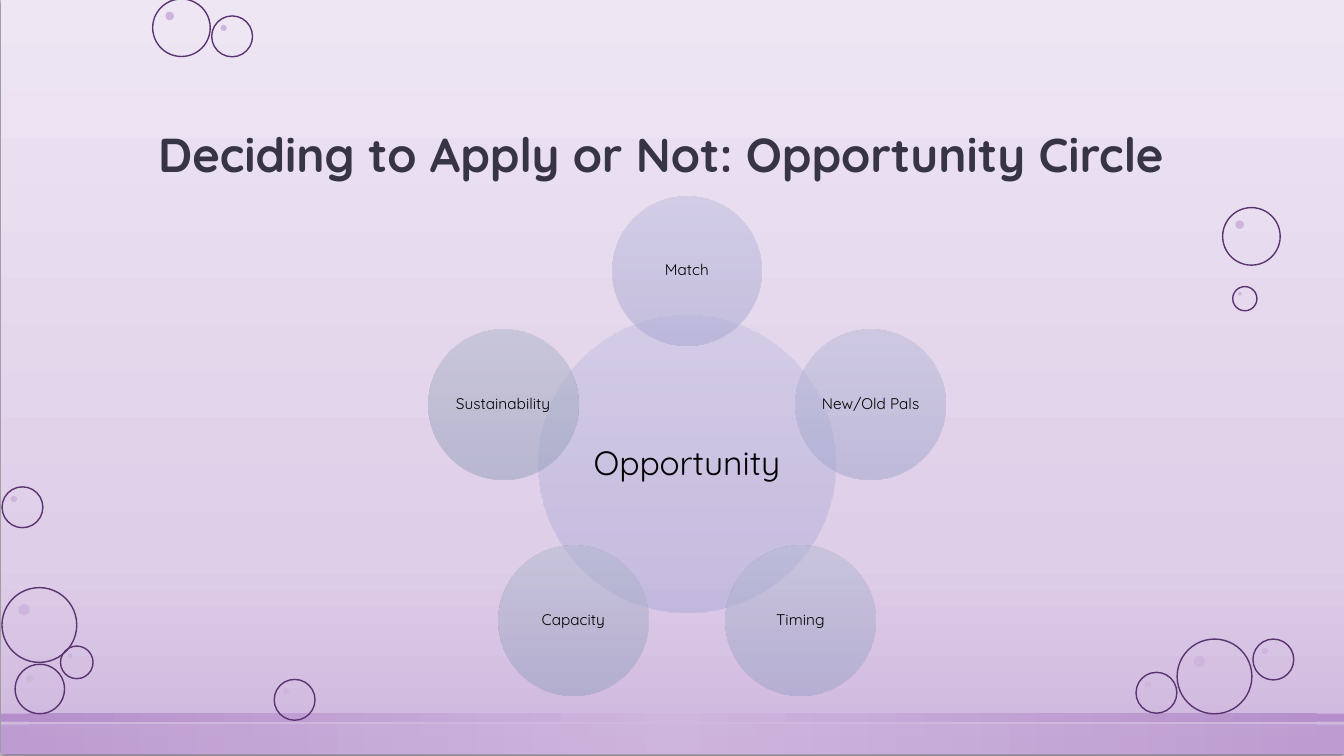
"""Build the Opportunity Circle slide on a grid of 160 columns by 90 rows."""
from dataclasses import dataclass
from math import cos, radians, sin
from typing import Optional

from lxml.etree import SubElement
from pptx import Presentation
from pptx.dml.color import RGBColor
from pptx.enum.shapes import MSO_SHAPE
from pptx.enum.text import MSO_ANCHOR, PP_ALIGN
from pptx.oxml.ns import qn
from pptx.util import Inches, Pt

COLS, ROWS = 160, 90
WIDTH, HEIGHT = Inches(13.333), Inches(7.5)


@dataclass(frozen=True)
class Theme:
    font: str = "Quicksand"
    title: str = "373545"
    label: str = "000000"
    outline: str = "5A3471"
    glint: str = "CEB5DD"
    sky: tuple = ((0, "EFE6F4"), (74, "DECEE8"), (100, "CEB5DD"))
    band: tuple = ((0, "CEB5DD"), (100, "AD84C6"))
    title_size: int = 34
    hub_size: int = 24
    petal_size: int = 11


@dataclass(frozen=True)
class Box:
    col: float
    row: float
    width: float
    height: float

    def emu(self) -> tuple:
        cw, rh = WIDTH / COLS, HEIGHT / ROWS
        return (round(self.col * cw), round(self.row * rh),
                round(self.width * cw), round(self.height * rh))


@dataclass(frozen=True)
class Bubble:
    col: float
    row: float
    size: float


@dataclass(frozen=True)
class Circle:
    text: str
    colors: tuple


THEME = Theme()
LARGE, MEDIUM, SMALL = 8.9, 6.85, 4.86
BUBBLES = (
    Bubble(0.24, 69.96, LARGE), Bubble(7.2, 76.92, 3.88),
    Bubble(1.8, 79.08, 5.88), Bubble(32.64, 80.88, SMALL),
    Bubble(0.24, 57.96, SMALL), Bubble(140.14, 76.08, LARGE),
    Bubble(135.24, 80.04, SMALL), Bubble(149.16, 76.08, SMALL),
    Bubble(145.56, 24.72, MEDIUM), Bubble(146.76, 34.12, 2.88),
    Bubble(18.18, -0.12, MEDIUM), Bubble(25.2, 1.9, SMALL),
)
BANDS = ((Box(0.12, 86.28, COLS, 3.6), 50), (Box(0.12, 84.96, COLS, 0.96), 80))
HUB = Circle("Opportunity", ("C4C3E3", "B8B6DC", "ACAAD9"))
PETALS = (
    Circle("Match", ("BEBFDE", "B1B2D7", "A4A6D3")),
    Circle("New/Old Pals", ("B9BCD9", "ADB0D2", "9FA4CD")),
    Circle("Timing", ("B5BAD4", "A8AFCC", "9AA2C7")),
    Circle("Capacity", ("B1B9CF", "A5ADC6", "95A0C0")),
    Circle("Sustainability", ("AEB7CA", "A2ABC1", "929EBA")),
)
CENTER_COL, CENTER_ROW = 81.78, 55.26
HUB_DIAMETER, PETAL_DIAMETER, ORBIT = 35.4, 17.8, 23


def add_plain(s, kind, box: Box, fill: Optional[str] = None,
              line: Optional[str] = None):
    sp = s.shapes.add_shape(kind, *box.emu())
    sp.shadow.inherit = False
    if fill:
        sp.fill.solid()
        sp.fill.fore_color.rgb = RGBColor.from_string(fill)
    else:
        sp.fill.background()
    if line:
        sp.line.color.rgb = RGBColor.from_string(line)
        sp.line.width = Pt(1)
    else:
        sp.line.fill.background()
    return sp


def set_gradient(sp, stops: tuple, alpha: int = 100, radial: bool = False) -> None:
    grad = sp._element.spPr.find(qn("a:noFill"))
    grad.tag = qn("a:gradFill")
    grad.set("rotWithShape", "1")
    stop_list = SubElement(grad, qn("a:gsLst"))
    for pos, color in stops:
        gs = SubElement(stop_list, qn("a:gs"), pos=str(pos * 1000))
        clr = SubElement(gs, qn("a:srgbClr"), val=color)
        if alpha < 100:
            SubElement(clr, qn("a:alpha"), val=str(alpha * 1000))
    if radial:
        shade = SubElement(grad, qn("a:path"), path="circle")
        SubElement(shade, qn("a:fillToRect"), dict.fromkeys("ltrb", "50000"))
    else:
        SubElement(grad, qn("a:lin"), ang="5400000", scaled="0")


def add_shadow(sp) -> None:
    effects = sp._element.spPr.find(qn("a:effectLst"))
    shadow = SubElement(effects, qn("a:outerShdw"), blurRad=str(Pt(4.5)),
                        dist=str(Pt(1.5)), dir="5400000", rotWithShape="0")
    clr = SubElement(shadow, qn("a:srgbClr"), val="000000")
    SubElement(clr, qn("a:alpha"), val="63000")


def set_text(sp, text: str, size: int, color: str, bold: bool = False) -> None:
    tf = sp.text_frame
    tf.text = text
    tf.word_wrap = True
    p = tf.paragraphs[0]
    p.line_spacing = 0.9
    font = p.runs[0].font
    font.name, font.size, font.bold = THEME.font, Pt(size), bold
    font.color.rgb = RGBColor.from_string(color)


def add_backdrop(s) -> None:
    sp = add_plain(s, MSO_SHAPE.RECTANGLE, Box(0.12, -0.24, COLS, ROWS))
    set_gradient(sp, THEME.sky)
    add_shadow(sp)
    for box, alpha in BANDS:
        set_gradient(add_plain(s, MSO_SHAPE.RECTANGLE, box), THEME.band, alpha, True)


def add_bubble(s, bubble: Bubble) -> None:
    size, inset, glint = bubble.size, 0.22 * bubble.size, 0.15 * bubble.size
    add_plain(s, MSO_SHAPE.OVAL, Box(bubble.col, bubble.row, size, size),
              line=THEME.outline)
    add_plain(s, MSO_SHAPE.OVAL,
              Box(bubble.col + inset, bubble.row + inset, glint, glint),
              fill=THEME.glint)


def add_title(s, text: str) -> None:
    sp = s.shapes.add_textbox(*Box(17.64, 6.12, 124.8, 16.2).emu())
    set_text(sp, text, THEME.title_size, THEME.title, bold=True)
    sp.text_frame.vertical_anchor = MSO_ANCHOR.BOTTOM


def add_circle(s, circle: Circle, col: float, row: float, diameter: float,
               size: int, inset: float) -> None:
    box = Box(col - diameter / 2, row - diameter / 2, diameter, diameter)
    sp = add_plain(s, MSO_SHAPE.OVAL, box)
    set_gradient(sp, tuple(zip((0, 50, 100), circle.colors)), 50)
    set_text(sp, circle.text, size, THEME.label)
    tf = sp.text_frame
    tf.margin_left = tf.margin_right = tf.margin_top = tf.margin_bottom = Inches(inset)
    tf.vertical_anchor = MSO_ANCHOR.MIDDLE
    tf.paragraphs[0].alignment = PP_ALIGN.CENTER


def main() -> None:
    prs = Presentation()
    prs.slide_width, prs.slide_height = WIDTH, HEIGHT
    s = prs.slides.add_slide(prs.slide_layouts[6])
    add_backdrop(s)
    for bubble in BUBBLES:
        add_bubble(s, bubble)
    add_title(s, "Deciding to Apply or Not: Opportunity Circle")
    add_circle(s, HUB, CENTER_COL, CENTER_ROW, HUB_DIAMETER, THEME.hub_size, 0.03)
    for i, petal in enumerate(PETALS):
        angle = radians(i * 360 / len(PETALS))
        add_circle(s, petal, CENTER_COL + ORBIT * sin(angle),
                   CENTER_ROW - ORBIT * cos(angle), PETAL_DIAMETER,
                   THEME.petal_size, 0.02)
    prs.save("out.pptx")


if __name__ == "__main__":
    main()
